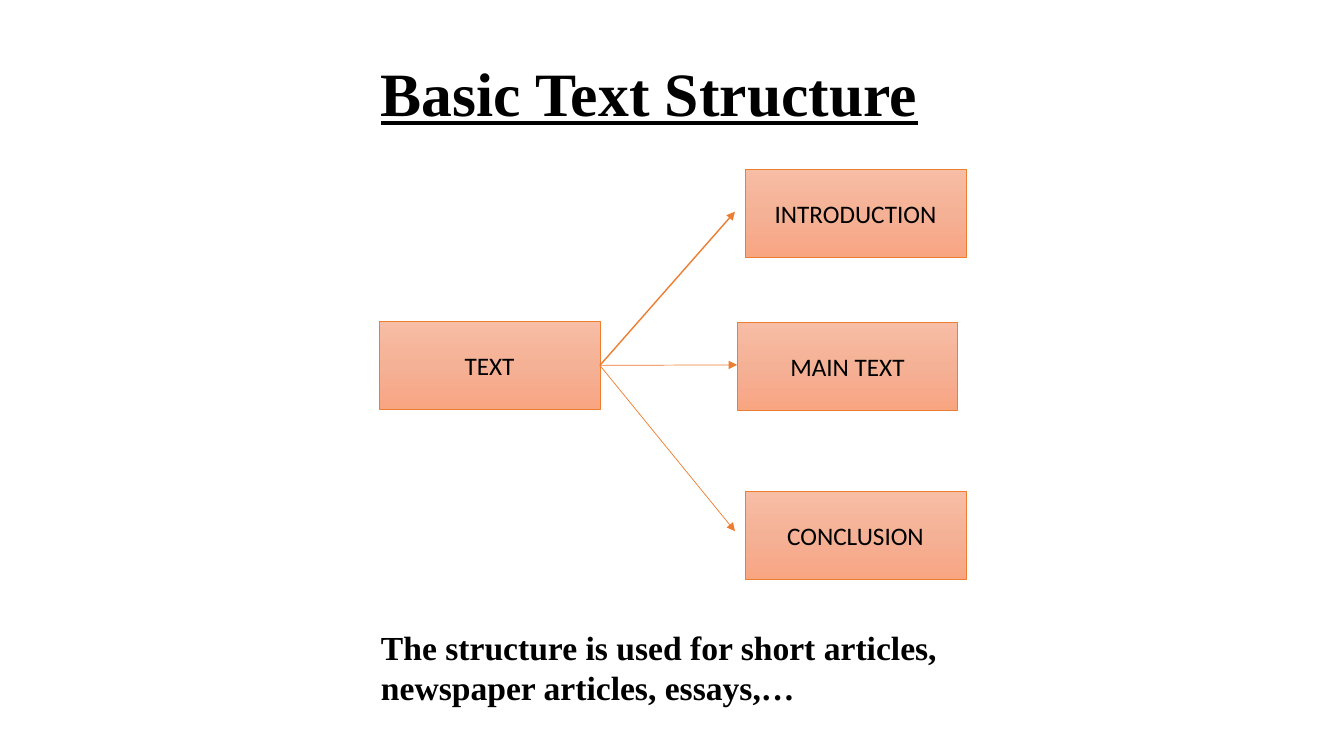
from copy import deepcopy
from dataclasses import dataclass

from lxml import etree
from pptx import Presentation
from pptx import util as u
from pptx.dml.color import RGBColor
from pptx.enum import shapes, text
from pptx.oxml.ns import qn


@dataclass(frozen=True)
class Theme:
    ink: RGBColor = RGBColor.from_string("000000")
    accent: RGBColor = RGBColor.from_string("ED7D31")
    gradient: tuple = ((0, "F7BDA5"), (0.5, "F5B196"), (1, "F8A582"))
    serif: str = "Times New Roman"
    sans: str = "Calibri"
    title_size: int = 44
    caption_size: int = 24
    node_size: int = 18


THEME = Theme()
NODE_W, NODE_H = 2.19, 0.87


def write(tf, words, size, font, bold=False):
    tf.word_wrap = True
    p = tf.paragraphs[0]
    p.text = words
    f = p.font
    f.size, f.name, f.bold = u.Pt(size), font, bold
    f.color.rgb = THEME.ink
    return p


def add_words(s, box, words, size, anchor):
    tf = s.shapes.add_textbox(*map(u.Inches, box)).text_frame
    tf.vertical_anchor = anchor
    return write(tf, words, size, THEME.serif, bold=True)


def add_title(s, box):
    p = add_words(s, box, "Basic Text Structure", THEME.title_size, text.MSO_ANCHOR.MIDDLE)
    p.line_spacing = 0.9
    p.font.underline = True


def add_caption(s, box):
    add_words(s, box, "The structure is used for short articles, newspaper articles, essays,…",
              THEME.caption_size, text.MSO_ANCHOR.TOP)


def fill_gradient(fill):
    fill.gradient()
    fill.gradient_angle = 270  # top to bottom
    first = fill._fill._gradFill.find(qn("a:gsLst"))[0]
    first.addnext(deepcopy(first))  # middle stop
    for stop, (position, colour) in zip(fill.gradient_stops, THEME.gradient):
        stop.position = position
        stop.color.rgb = RGBColor.from_string(colour)


def add_node(group, x, y, label):
    sp = group.shapes.add_shape(shapes.MSO_SHAPE.RECTANGLE,
                                *map(u.Inches, (x, y, NODE_W, NODE_H)))
    sp.shadow.inherit = False
    fill_gradient(sp.fill)
    sp.line.color.rgb = THEME.accent
    sp.line.width = u.Pt(0.5)
    sp.text_frame.vertical_anchor = text.MSO_ANCHOR.MIDDLE
    write(sp.text_frame, label, THEME.node_size, THEME.sans).alignment = text.PP_ALIGN.CENTER


def add_arrow(group, start, end, weight):
    c = group.shapes.add_connector(shapes.MSO_CONNECTOR.STRAIGHT,
                                   *map(u.Inches, (*start, *end)))
    c.line.color.rgb = THEME.accent
    c.line.width = u.Pt(weight)
    etree.SubElement(c.line._get_or_add_ln(), qn("a:tailEnd"), type="triangle")
    etree.SubElement(c._element.spPr, qn("a:effectLst"))


def add_diagram(s, x, y):
    group = s.shapes.add_group_shape()
    root_y = y + 1.51
    # Part label, node offset, arrow tip offset, arrow weight
    parts = [
        ("INTRODUCTION", (3.63, 0), (3.53, 0.42), 1),
        ("MAIN TEXT", (3.55, 1.52), (3.55, 1.94), 0.5),
        ("CONCLUSION", (3.63, 3.2), (3.53, 3.59), 0.5),
    ]
    add_node(group, x, root_y, "TEXT")
    for label, (dx, dy), _, _ in parts:
        add_node(group, x + dx, y + dy, label)
    start = (x + NODE_W, root_y + NODE_H / 2)
    for _, _, (dx, dy), weight in parts:
        add_arrow(group, start, (x + dx, y + dy), weight)


def main():
    prs = Presentation()
    prs.slide_width, prs.slide_height = u.Inches(13.33), u.Inches(7.5)
    s = prs.slides.add_slide(prs.slide_layouts[6])
    add_title(s, (3.68, 0.23, 6.15, 1.45))
    add_diagram(s, 3.76, 1.68)
    add_caption(s, (3.68, 6.17, 6.85, 0.91))
    prs.save("out.pptx")


if __name__ == "__main__":
    main()
